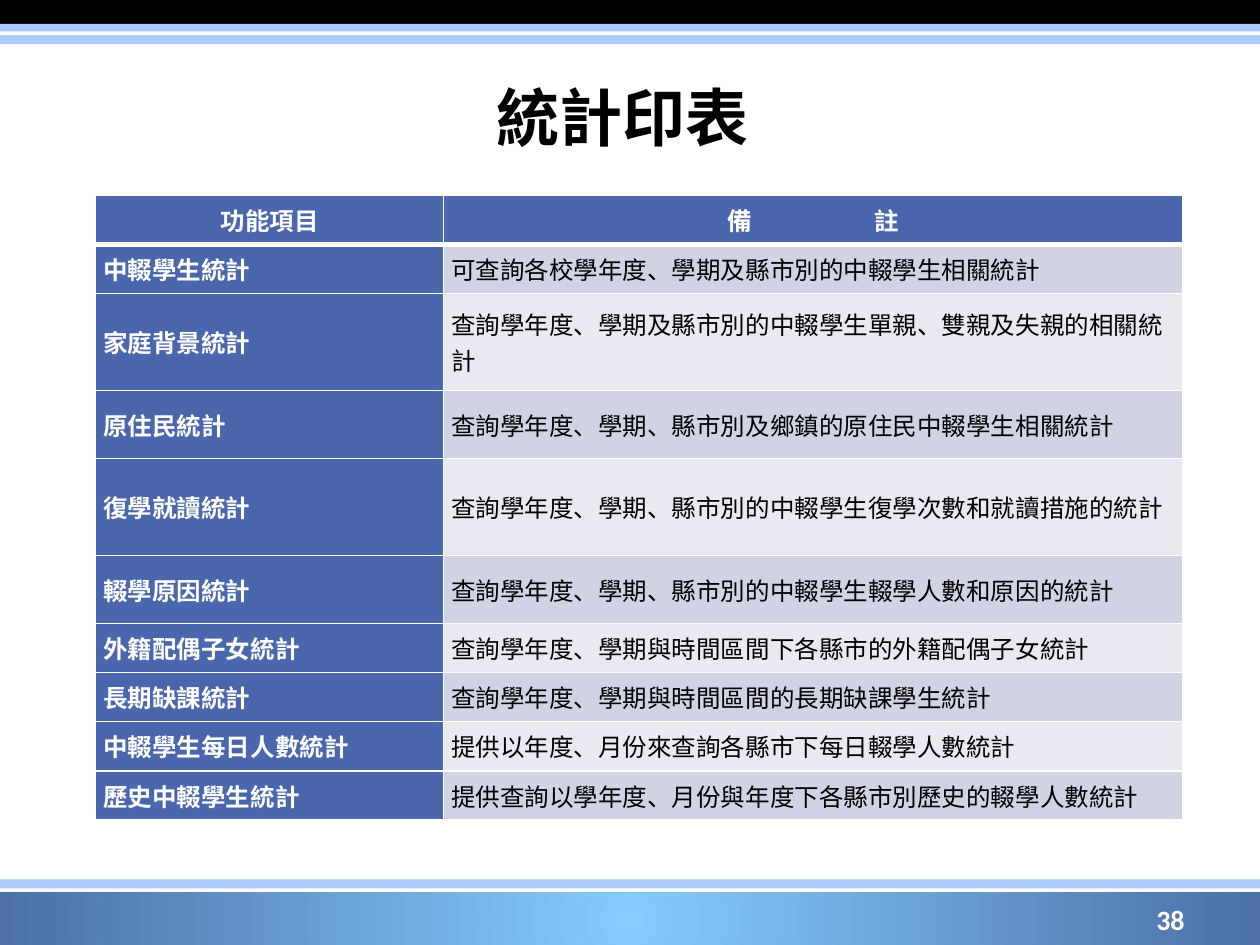
"""Build the slide that lists the statistics reports."""
from lxml import etree
from pptx import Presentation
from pptx.dml.color import RGBColor
from pptx.enum.shapes import MSO_SHAPE
from pptx.enum.text import MSO_ANCHOR, PP_ALIGN
from pptx.oxml import parse_xml
from pptx.oxml.ns import qn
from pptx.util import Inches, Pt

RECT = MSO_SHAPE.RECTANGLE
MIDDLE = MSO_ANCHOR.MIDDLE
LEFT, CENTER, RIGHT = PP_ALIGN.LEFT, PP_ALIGN.CENTER, PP_ALIGN.RIGHT
SPACE = "http://schemas.openxmlformats.org/drawingml/2006/main"

THEME = {
    "black": "000000", "white": "FFFFFF", "sky": "ACCBF9", "head": "4A66AC",
    "odd": "D0D3E3", "even": "E9EAF1", "glow": "85CBFF", "edge": "4C70A6",
    "title": ("Karla", 36), "cell": ("Times New Roman", 14),
    "page": ("Calibri", 16),
}

TITLE = "統計印表 "
PAGE = "38"
HEADS = ("功能項目", "備註")
ROWS = [
    ("中輟學生統計", "可查詢各校學年度、學期及縣市別的中輟學生相關統計", 0.39),
    ("家庭背景統計", "查詢學年度、學期及縣市別的中輟學生單親、雙親及失親的相關統計", 0.77),
    ("原住民統計", "查詢學年度、學期、縣市別及鄉鎮的原住民中輟學生相關統計", 0.54),
    ("復學就讀統計", "查詢學年度、學期、縣市別的中輟學生復學次數和就讀措施的統計", 0.77),
    ("輟學原因統計", "查詢學年度、學期、縣市別的中輟學生輟學人數和原因的統計", 0.54),
    ("外籍配偶子女統計", "查詢學年度、學期與時間區間下各縣市的外籍配偶子女統計", 0.39),
    ("長期缺課統計", "查詢學年度、學期與時間區間的長期缺課學生統計", 0.39),
    ("中輟學生每日人數統計", "提供以年度、月份來查詢各縣市下每日輟學人數統計", 0.39),
    ("歷史中輟學生統計", "提供查詢以學年度、月份與年度下各縣市別歷史的輟學人數統計", 0.39),
]
HEAD_TALL = 0.39
WIDTHS = (2.76, 5.87)
BANDS = [
    (0, 0, 10, 0.19, "black"), (0, 0.19, 10, 0.16, "sky"),
    (0, 0.25, 10, 0.03, "white"), (-0.01, 7.07, 10.01, 0.46, "glow"),
    (-0.01, 6.98, 10.01, 0.1, "sky"), (-0.01, 7.05, 10.01, 0.03, "white"),
]


def color(name):
    return RGBColor.from_string(THEME[name])


def style(frame, kind, ink, align, bold=True):
    frame.word_wrap = True
    frame.vertical_anchor = MIDDLE
    para = frame.paragraphs[0]
    para.alignment = align
    for run in para.runs:
        run.font.name, size = THEME[kind]
        run.font.size = Pt(size)
        run.font.bold = bold
        run.font.color.rgb = color(ink)


def glow(shape):
    stops = "".join(
        f'<a:gs pos="{pos}"><a:srgbClr val="{THEME[name]}"/></a:gs>'
        for pos, name in ((0, "glow"), (100000, "edge")))
    grad = parse_xml(
        f'<a:gradFill xmlns:a="{SPACE}"><a:gsLst>{stops}</a:gsLst>'
        '<a:path path="circle"><a:fillToRect l="50000" t="50000" '
        'r="50000" b="50000"/></a:path></a:gradFill>')
    solid = shape.fill._xPr.find(qn("a:solidFill"))
    solid.getparent().replace(solid, grad)


def add_band(slide, left, top, wide, tall, name):
    band = slide.shapes.add_shape(
        RECT, Inches(left), Inches(top), Inches(wide), Inches(tall))
    band.shadow.inherit = False
    band.line.fill.background()
    band.fill.solid()
    band.fill.fore_color.rgb = color(name)
    if name == "glow":
        glow(band)


def add_edges(cell, row):
    props = cell._tc.get_or_add_tcPr()
    thick = {"T": 3 if row == 1 else 1, "B": 3 if row == 0 else 1}
    for side in "LRTB":
        line = etree.SubElement(
            props, qn(f"a:ln{side}"), w=str(Pt(thick.get(side, 1))))
        fill = etree.SubElement(line, qn("a:solidFill"))
        etree.SubElement(fill, qn("a:srgbClr"), val=THEME["white"])


def fill_cell(cell, text, row, col):
    strong = row == 0 or col == 0
    cell.text_frame.text = text
    cell.margin_left = cell.margin_right = Inches(0.06)
    cell.margin_top = cell.margin_bottom = 0
    cell.vertical_anchor = MIDDLE
    add_edges(cell, row)
    cell.fill.solid()
    cell.fill.fore_color.rgb = color(
        "head" if strong else "odd" if row % 2 else "even")
    style(cell.text_frame, "cell", "white" if strong else "black",
          LEFT if row else CENTER, strong)


def spread(cell, gap):
    para = cell.text_frame.paragraphs[0]
    first, last = para.text
    para.runs[0].text = first
    para.add_run().text = last
    style(cell.text_frame, "cell", "white", CENTER)
    para.runs[0].font._element.set("spc", str(gap * 100))


def add_grid(slide):
    talls = [HEAD_TALL] + [row[2] for row in ROWS]
    grid = slide.shapes.add_table(
        len(talls), len(WIDTHS), Inches(0.76), Inches(1.55),
        Inches(sum(WIDTHS)), Inches(sum(talls))).table
    for col, wide in zip(grid.columns, WIDTHS):
        col.width = Inches(wide)
    for row, (texts, tall) in enumerate(zip([HEADS] + ROWS, talls)):
        grid.rows[row].height = Inches(tall)
        for col, text in enumerate(texts[:2]):
            fill_cell(grid.cell(row, col), text, row, col)
    spread(grid.cell(0, 1), 5 * THEME["cell"][1])


def main():
    deck = Presentation()
    deck.slide_width, deck.slide_height = Inches(10), Inches(7.5)
    slide = deck.slides.add_slide(deck.slide_layouts[5])
    for band in BANDS:
        add_band(slide, *band)
    title = slide.shapes.title
    title.left, title.top = Inches(0.5), Inches(0.3)
    title.width, title.height = Inches(9), Inches(1.25)
    title.text_frame.text = TITLE
    style(title.text_frame, "title", "black", CENTER)
    page = slide.shapes.add_textbox(
        Inches(7.17), Inches(7.1), Inches(2.33), Inches(0.4))
    page.text_frame.text = PAGE
    style(page.text_frame, "page", "white", RIGHT)
    add_grid(slide)
    deck.save("out.pptx")


if __name__ == "__main__":
    main()
